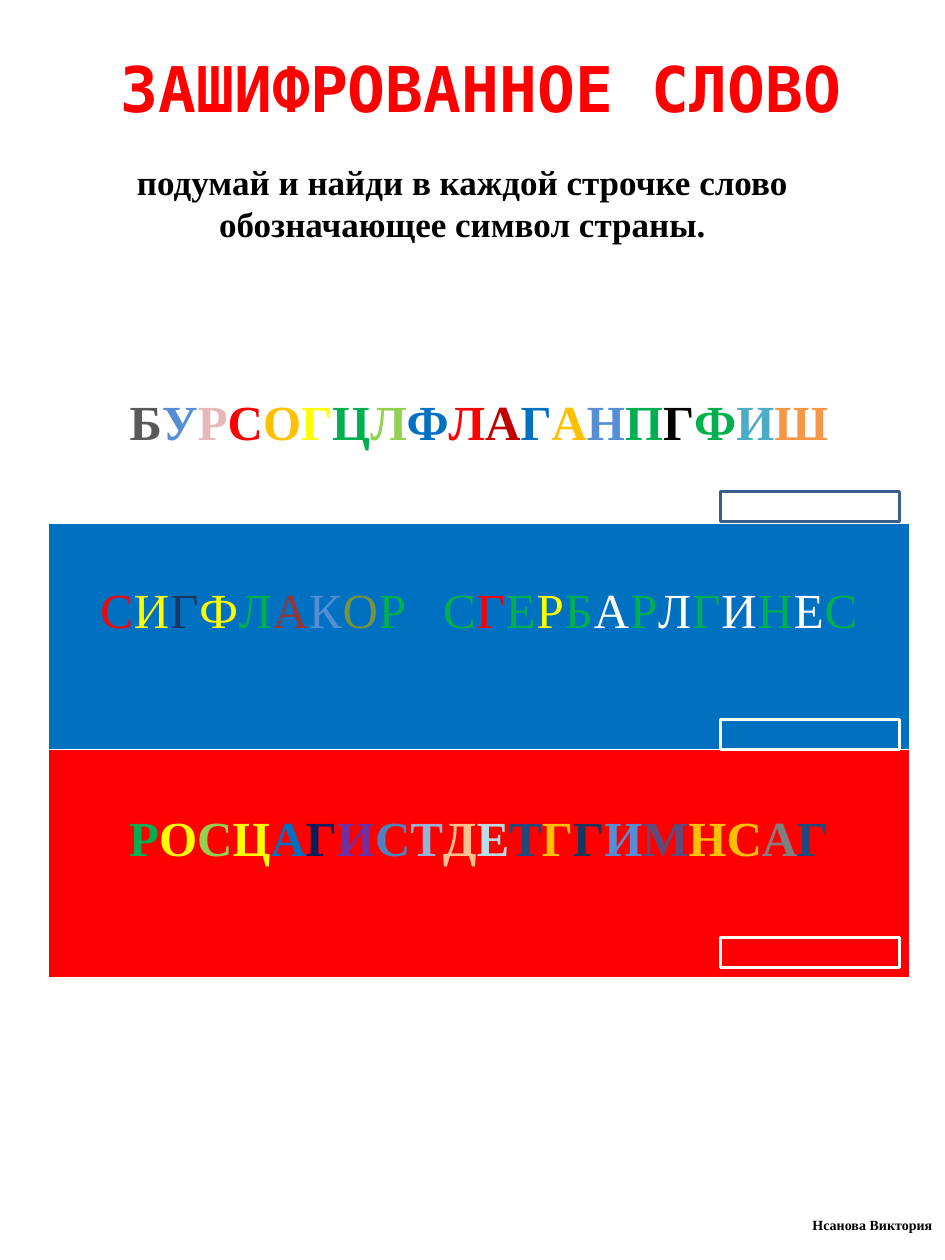
from lxml import etree
from pptx import Presentation, util as u
from pptx.dml.color import RGBColor
from pptx.enum import shapes, text
from pptx.oxml import ns

WIDTH, HEIGHT = 7.5, 10
SERIF, MONO = "Times New Roman", "DejaVu Sans Mono"
WHITE, BLACK, RED, BLUE = "FFFFFF", "000000", "FF0000", "0070C0"
CENTER, RIGHT = text.PP_ALIGN.CENTER, text.PP_ALIGN.RIGHT

CAPTIONS = [
    ("ЗАШИФРОВАННОЕ СЛОВО", (0.44, 0, 6.75, 1.38), 36, MONO, RED, CENTER, True),
    ("подумай и найди в каждой строчке слово обозначающее символ страны.",
     (0.52, 1.22, 6.3, 0.77), 20, SERIF, BLACK, CENTER, True),
    ("Нсанова Виктория", (6.31, 9.6, 1.19, 0.24), 8, SERIF, BLACK, RIGHT, False),
]

STRIPES = [
    {"letters": "БУРСОГЦЛФЛАГАНПГФИШ",
     "colours": "595959 558ED5 E6B9B8 FF0000 FFC000 FFFF00 00B050 92D050 0070C0 FF0000 "
                "C00000 0070C0 FFC000 558ED5 00B050 000000 00B050 4BACC6 F79646",
     "fill": WHITE, "bold": True, "spacing": 0, "margin": 0.82,
     "box_line": "3A5F8C", "box_offset": 1.57},
    {"letters": "СИГФЛАКОРОСГЕРБАРЛГИНЕС",
     "colours": "FF0000 FFFF00 17375E FFFF00 00B050 953735 558ED5 77933C 00B050 0070C0 "
                "00B050 FF0000 00B050 FFFF00 00B050 FFFEFE 00B050 FFFEFE 00B050 FFFEFE "
                "00B050 FFFEFE 00B050",
     "fill": BLUE, "bold": False, "spacing": 0.5, "margin": 0.5,
     "box_line": WHITE, "box_offset": 1.57},
    {"letters": "РОСЦАГИСТДЕТГГИМНСАГ",
     "colours": "00B050 FFFF00 92D050 FFFF00 0070C0 002060 7030A0 4F81BD 95B3D7 FAC090 "
                "B7DEE8 1F497D FFC000 17375E 558ED5 604A7B FFC000 FFC000 808080 1F497D",
     "fill": RED, "bold": True, "spacing": 0, "margin": 0.5,
     "box_line": WHITE, "box_offset": 1.49},
]
TABLE_LEFT, TABLE_TOP, TABLE_WIDTH, ROW_HEIGHT = 0.38, 2.33, 6.84, 1.81
BOX_LEFT, BOX_WIDTH, BOX_HEIGHT = 5.72, 1.42, 0.24


def colour(value):
    return RGBColor.from_string(value)


def inches(*values):
    return [u.Inches(value) for value in values]


def paint(target, value):
    target.fill.solid()
    target.fill.fore_color.rgb = colour(value)


def add_caption(slide, words, place, size, font, ink, align, wrap):
    frame = slide.shapes.add_textbox(*inches(*place)).text_frame
    frame.word_wrap = wrap
    frame.vertical_anchor = text.MSO_ANCHOR.MIDDLE
    paragraph = frame.paragraphs[0]
    paragraph.text = words
    paragraph.alignment = align
    paragraph.font.size = u.Pt(size)
    paragraph.font.name = font
    paragraph.font.bold = True
    paragraph.font.color.rgb = colour(ink)


def add_borders(cell, bottom):
    properties = cell._tc.get_or_add_tcPr()
    widths = {"a:lnL": 1, "a:lnR": 1, "a:lnT": 1, "a:lnB": bottom}
    for position, (tag, width) in enumerate(widths.items()):
        line = etree.Element(ns.qn(tag), w=str(u.Pt(width)))
        fill = etree.SubElement(line, ns.qn("a:solidFill"))
        etree.SubElement(fill, ns.qn("a:srgbClr"), val=WHITE)
        properties.insert(position, line)


def fill_stripe(cell, stripe):
    paint(cell, stripe["fill"])
    cell.margin_top = u.Inches(stripe["margin"])
    paragraph = cell.text_frame.paragraphs[0]
    paragraph.alignment = CENTER
    paragraph.font.size = u.Pt(28)
    paragraph.font.name = SERIF
    paragraph.font.bold = stripe["bold"]
    for letter, ink in zip(stripe["letters"], stripe["colours"].split()):
        run = paragraph.add_run()
        run.text = letter
        run.font.size = u.Pt(28)
        run.font.name = SERIF
        run.font.bold = stripe["bold"]
        run.font.color.rgb = colour(ink)
        if stripe["spacing"]:
            run._r.get_or_add_rPr().set("spc", str(int(stripe["spacing"] * 100)))


def add_answer_box(slide, row, stripe):
    top = TABLE_TOP + row * ROW_HEIGHT + stripe["box_offset"]
    box = slide.shapes.add_shape(
        shapes.MSO_SHAPE.RECTANGLE, *inches(BOX_LEFT, top, BOX_WIDTH, BOX_HEIGHT))
    box.shadow.inherit = False
    paint(box, stripe["fill"])
    box.line.color.rgb = colour(stripe["box_line"])
    box.line.width = u.Pt(2)


def main():
    presentation = Presentation()
    presentation.slide_width, presentation.slide_height = inches(WIDTH, HEIGHT)
    slide = presentation.slides.add_slide(presentation.slide_layouts[6])
    table = slide.shapes.add_table(
        len(STRIPES), 1,
        *inches(TABLE_LEFT, TABLE_TOP, TABLE_WIDTH, ROW_HEIGHT * len(STRIPES))).table
    table.first_row = table.horz_banding = False
    for row, stripe in enumerate(STRIPES):
        cell = table.cell(row, 0)
        fill_stripe(cell, stripe)
        add_borders(cell, 3 if row == 0 else 1)
        add_answer_box(slide, row, stripe)
    for caption in CAPTIONS:
        add_caption(slide, *caption)
    presentation.save("out.pptx")


if __name__ == "__main__":
    main()
